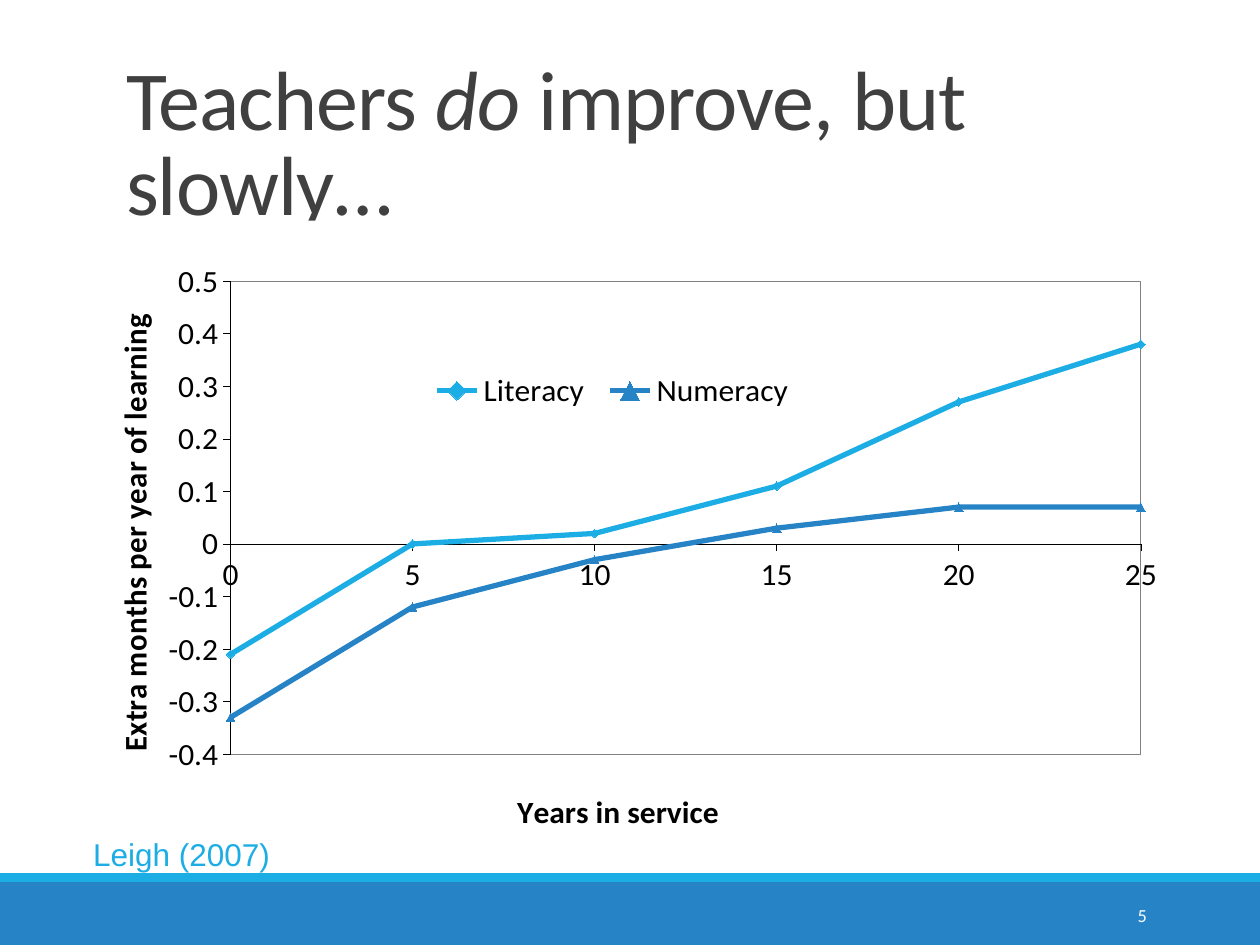
from lxml import etree
from pptx import Presentation
from pptx.chart.data import XyChartData
from pptx.dml.color import RGBColor
from pptx.enum.chart import (XL_CHART_TYPE, XL_LEGEND_POSITION, XL_MARKER_STYLE,
                             XL_TICK_MARK)
from pptx.enum.shapes import MSO_CONNECTOR, MSO_SHAPE
from pptx.enum.text import MSO_ANCHOR, MSO_AUTO_SIZE, PP_ALIGN
from pptx.oxml import parse_xml
from pptx.oxml.ns import nsdecls, qn
from pptx.util import Inches, Pt

SCATTER = XL_CHART_TYPE.XY_SCATTER_LINES
TOP = XL_LEGEND_POSITION.TOP
OUT, NONE = XL_TICK_MARK.OUTSIDE, XL_TICK_MARK.NONE
DIAMOND, WEDGE = XL_MARKER_STYLE.DIAMOND, XL_MARKER_STYLE.TRIANGLE
RECT, STRAIGHT = MSO_SHAPE.RECTANGLE, MSO_CONNECTOR.STRAIGHT
BOTTOM, MIDDLE = MSO_ANCHOR.BOTTOM, MSO_ANCHOR.MIDDLE
LEFT, RIGHT = PP_ALIGN.LEFT, PP_ALIGN.RIGHT
FIXED = MSO_AUTO_SIZE.NONE

BLUE = RGBColor(0x26, 0x83, 0xC6)
SKY = RGBColor(0x1C, 0xAD, 0xE4)
DARK = RGBColor(0x40, 0x40, 0x40)
GREY = RGBColor(0x80, 0x80, 0x80)
BLACK = RGBColor(0, 0, 0)
WHITE = RGBColor(0xFF, 0xFF, 0xFF)


def style(font, size, color, name="Calibri"):
    font.size, font.name = Pt(size), name
    font.color.rgb = color


def place(part, index, **spots):
    """Give a chart part a manual layout, as fractions of the chart."""
    for old in part.findall(qn("c:layout")):
        part.remove(old)
    layout = etree.Element(qn("c:layout"))
    manual = etree.SubElement(layout, qn("c:manualLayout"))
    for tag, val in spots.items():
        etree.SubElement(manual, qn("c:" + tag)).set("val", str(val))
    part.insert(index, layout)


prs = Presentation()
prs.slide_width, prs.slide_height = Inches(10), Inches(7.5)
slide = prs.slides.add_slide(prs.slide_layouts[5])
shapes = slide.shapes

# Title
title = shapes.title
title.left, title.top = Inches(0.9), Inches(0.31)
title.width, title.height = Inches(8.25), Inches(1.59)
frame = title.text_frame
frame.auto_size, frame.vertical_anchor = FIXED, BOTTOM
para = frame.paragraphs[0]
para.alignment, para.line_spacing = LEFT, 0.85
for text, slant in (("Teachers ", False), ("do ", True),
                    ("improve, but slowly…", False)):
    run = para.add_run()
    run.text = text
    style(run.font, 48, DARK)
    run.font.italic = slant
    run.font._element.set("spc", "-50")

# Footer bands and title rule
for top, height, color in ((7, 0.5, BLUE), (6.93, 0.07, SKY)):
    band = shapes.add_shape(RECT, 0, Inches(top), Inches(10), Inches(height))
    band.shadow.inherit = False
    band.fill.solid()
    band.fill.fore_color.rgb = color
    band.line.fill.background()
rule = shapes.add_connector(STRAIGHT, Inches(0.98), Inches(1.9),
                            Inches(9.15), Inches(1.9))
rule.line.color.rgb, rule.line.width = GREY, Pt(0.5)
etree.SubElement(rule._element.spPr, qn("a:effectLst"))

# Page number and citation
for text, spot, size, color, name, side, anchor in (
    ("5", (8.12, 7.06, 1.08, 0.4), 10.5, WHITE, "Calibri", RIGHT, MIDDLE),
    ("Leigh (2007)", (0.64, 6.58, 2.12, 0.4), 18, SKY, "Arial", LEFT, None),
):
    frame = shapes.add_textbox(*map(Inches, spot)).text_frame
    frame.word_wrap, frame.vertical_anchor = True, anchor
    para = frame.paragraphs[0]
    para.alignment = side
    run = para.add_run()
    run.text = text
    style(run.font, size, color, name)

# Chart
years = range(0, 26, 5)
data = XyChartData()
for name, gains in (("Literacy", (-0.21, 0, 0.02, 0.11, 0.27, 0.38)),
                    ("Numeracy", (-0.33, -0.12, -0.03, 0.03, 0.07, 0.07))):
    series = data.add_series(name)
    for year, gain in zip(years, gains):
        series.add_data_point(year, gain)
chart = shapes.add_chart(SCATTER, Inches(0.67), Inches(1.75), Inches(8.92),
                         Inches(4.92), data).chart
style(chart.font, 18, BLACK)
chart.has_title = False
plot = chart.plots[0]
plot.vary_by_categories = False
for series, color, mark in zip(plot.series, (SKY, BLUE), (DIAMOND, WEDGE)):
    series.smooth = False
    series.format.line.color.rgb, series.format.line.width = color, Pt(3)
    series.marker.style, series.marker.size = mark, 5
    series.marker.format.fill.solid()
    series.marker.format.fill.fore_color.rgb = color
    series.marker.format.line.color.rgb = color

# Axes
for axis, text, low, high, step, turn, x, y in (
    (chart.category_axis, "Years in service", 0, 25, 5, 0, 0.38, 0.93),
    (chart.value_axis, "Extra months per year of learning",
     -0.4, 0.5, 0.1, -5400000, 0.02, 0.16),
):
    axis.minimum_scale, axis.maximum_scale, axis.major_unit = low, high, step
    axis.has_major_gridlines = False
    axis.major_tick_mark, axis.minor_tick_mark = OUT, NONE
    axis.format.line.color.rgb, axis.format.line.width = BLACK, Pt(0.25)
    style(axis.tick_labels.font, 18, BLACK)
    label = axis.axis_title
    run = label.text_frame.paragraphs[0].add_run()
    run.text = text
    style(run.font, 18, BLACK)
    run.font.bold = True
    body = next(label._element.iter(qn("a:bodyPr")))
    body.set("rot", str(turn))
    body.set("vert", "horz")
    place(label._element, 1, xMode="edge", yMode="edge", x=x, y=y)

# Legend
chart.has_legend = True
legend = chart.legend
legend.position, legend.include_in_layout = TOP, False
style(legend.font, 18, BLACK)
place(legend._element, 1, xMode="edge", yMode="edge",
      x=0.3, y=0.25, w=0.34, h=0.06)

# Plot frame and chart background
area = chart._chartSpace.chart.plotArea
place(area, 0, layoutTarget="inner", xMode="edge", yMode="edge",
      x=0.13, y=0.1, w=0.81, h=0.78)
area.append(parse_xml(
    f'<c:spPr {nsdecls("c", "a")}><a:noFill/><a:ln w="6350"><a:solidFill>'
    f'<a:srgbClr val="{GREY}"/></a:solidFill></a:ln></c:spPr>'))
chart._chartSpace.chart.addnext(parse_xml(
    f'<c:spPr {nsdecls("c", "a")}><a:solidFill><a:srgbClr val="{WHITE}"/>'
    '</a:solidFill><a:ln><a:noFill/></a:ln></c:spPr>'))

prs.save("out.pptx")
